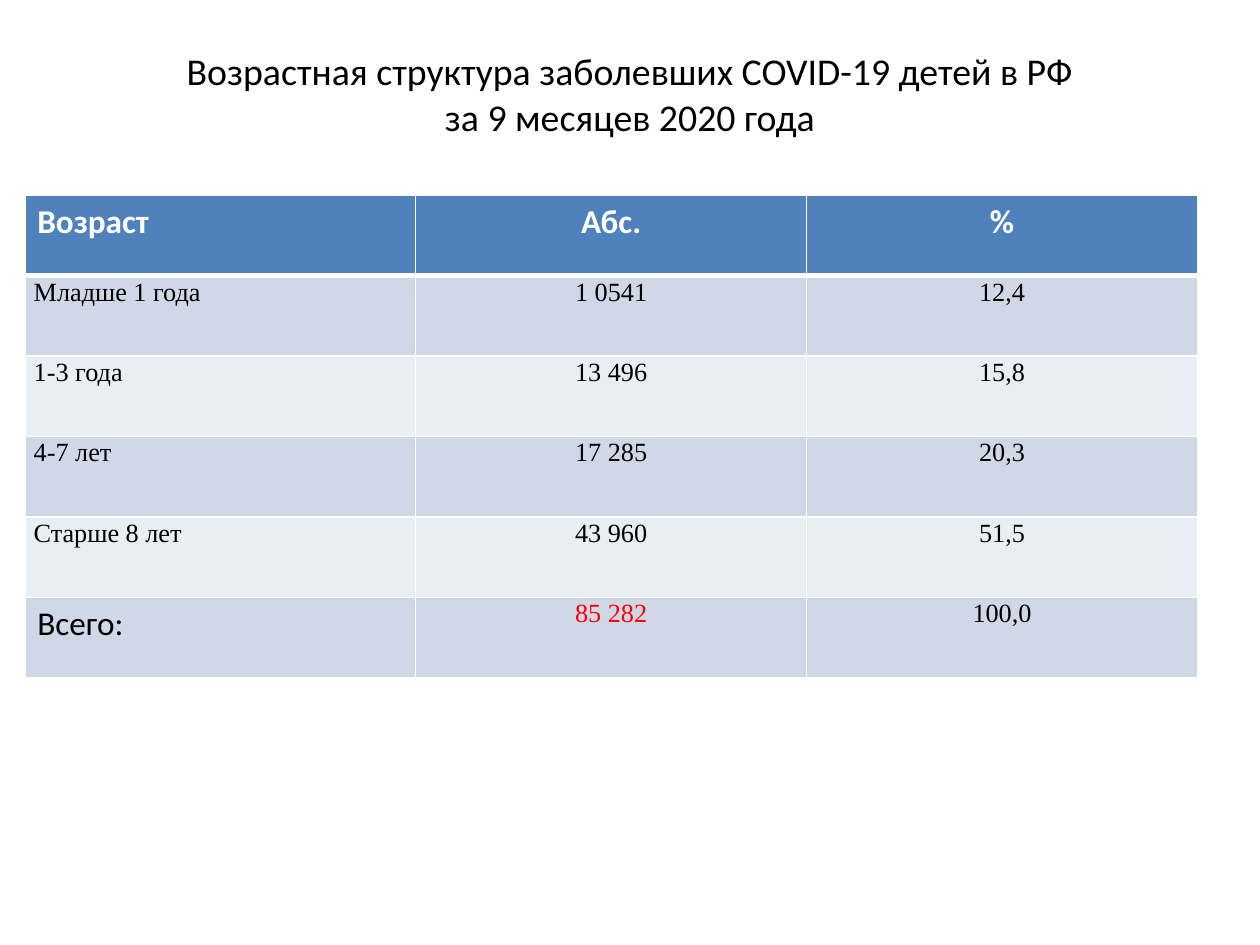
from lxml.etree import SubElement
from pptx import Presentation
from pptx.dml.color import RGBColor
from pptx.enum.text import MSO_ANCHOR, PP_ALIGN
from pptx.oxml.ns import qn
from pptx.util import Cm, Pt

BLACK = RGBColor(0x00, 0x00, 0x00)
WHITE = RGBColor(0xFF, 0xFF, 0xFF)
RED = RGBColor(0xFF, 0x00, 0x00)
BLUE = RGBColor(0x4F, 0x81, 0xBD)
BANDS = (RGBColor(0xE9, 0xED, 0xF4), RGBColor(0xD0, 0xD8, 0xE8))

TITLE = ("Возрастная структура заболевших COVID-19 детей в РФ", "за 9 месяцев 2020 года")
ROWS = (
    ("Возраст", "Абс.", "%"),
    ("Младше 1 года", "1 0541", "12,4"),
    ("1-3 года", "13 496", "15,8"),
    ("4-7 лет", "17 285", "20,3"),
    ("Старше 8 лет", "43 960", "51,5"),
    ("Всего:", "85 282", "100,0"),
)

TITLE_FONT = {"name": "Calibri", "size": Pt(21.6)}
LABEL_FONT = {"name": "Calibri", "size": Pt(19)}
HEAD_FONT = {**LABEL_FONT, "bold": True}
BODY_FONT = {"name": "Times New Roman", "size": Pt(15), "bold": False}
TITLE_FRAME = {"word_wrap": True, "vertical_anchor": MSO_ANCHOR.MIDDLE, "margin_bottom": Cm(1.06)}
BODY_MARGINS = {"margin_left": Cm(0.18), "margin_right": Cm(0.18),
                "margin_top": 0, "margin_bottom": 0}


def set_attrs(obj, values):
    """Set every attribute named in a dict of format values."""
    for name, value in values.items():
        setattr(obj, name, value)


def write(p, text, font, color, align):
    """Put one formatted run into a paragraph."""
    p.alignment = align
    r = p.add_run()
    r.text = text
    set_attrs(r.font, font)
    r.font.color.rgb = color


def add_title(s, left, top, width, height):
    """Add the centred title in the given box."""
    tf = s.shapes.add_textbox(left, top, width, height).text_frame
    set_attrs(tf, TITLE_FRAME)
    for i, line in enumerate(TITLE):
        p = tf.add_paragraph() if i else tf.paragraphs[0]
        write(p, line, TITLE_FONT, BLACK, PP_ALIGN.CENTER)


def add_borders(cell, widths):
    """Give a cell solid white borders of the given widths in points."""
    tcPr = cell._tc.get_or_add_tcPr()
    for side, width in widths.items():
        ln = SubElement(tcPr, qn(f"a:ln{side}"), w=str(Pt(width)))
        SubElement(SubElement(ln, qn("a:solidFill")), qn("a:srgbClr"), val=str(WHITE))


def fill_cell(cell, row, col, text):
    """Format one cell by its place in the table."""
    head, total = row == 0, row == len(ROWS) - 1
    add_borders(cell, {"L": 1, "R": 1, "T": 3 if row == 1 else 1, "B": 3 if head else 1})
    cell.fill.solid()
    cell.fill.fore_color.rgb = BLUE if head else BANDS[row % 2]
    p = cell.text_frame.paragraphs[0]
    align = PP_ALIGN.CENTER if col else PP_ALIGN.LEFT
    if head:
        write(p, text, HEAD_FONT, WHITE, align)
    elif total and col == 0:
        write(p, text, LABEL_FONT, BLACK, align)
    else:
        set_attrs(cell, BODY_MARGINS)
        p.line_spacing = 1.07
        write(p, text, BODY_FONT, RED if total and col == 1 else BLACK, align)


def add_age_table(s, left, top, width, height):
    """Add the table of age groups in the given box."""
    table = s.shapes.add_table(len(ROWS), len(ROWS[0]), left, top, width, height).table
    for i, row in enumerate(ROWS):
        for j, text in enumerate(row):
            fill_cell(table.cell(i, j), i, j, text)


def main():
    """Build the slide and save it."""
    prs = Presentation()
    set_attrs(prs, {"slide_width": Cm(25.4), "slide_height": Cm(19.05)})
    s = prs.slides.add_slide(prs.slide_layouts[6])
    add_title(s, Cm(1.27), Cm(0.76), Cm(22.86), Cm(3.18))
    add_age_table(s, Cm(0.5), Cm(3.94), Cm(23.64), Cm(9.72))
    prs.save("out.pptx")


if __name__ == "__main__":
    main()
